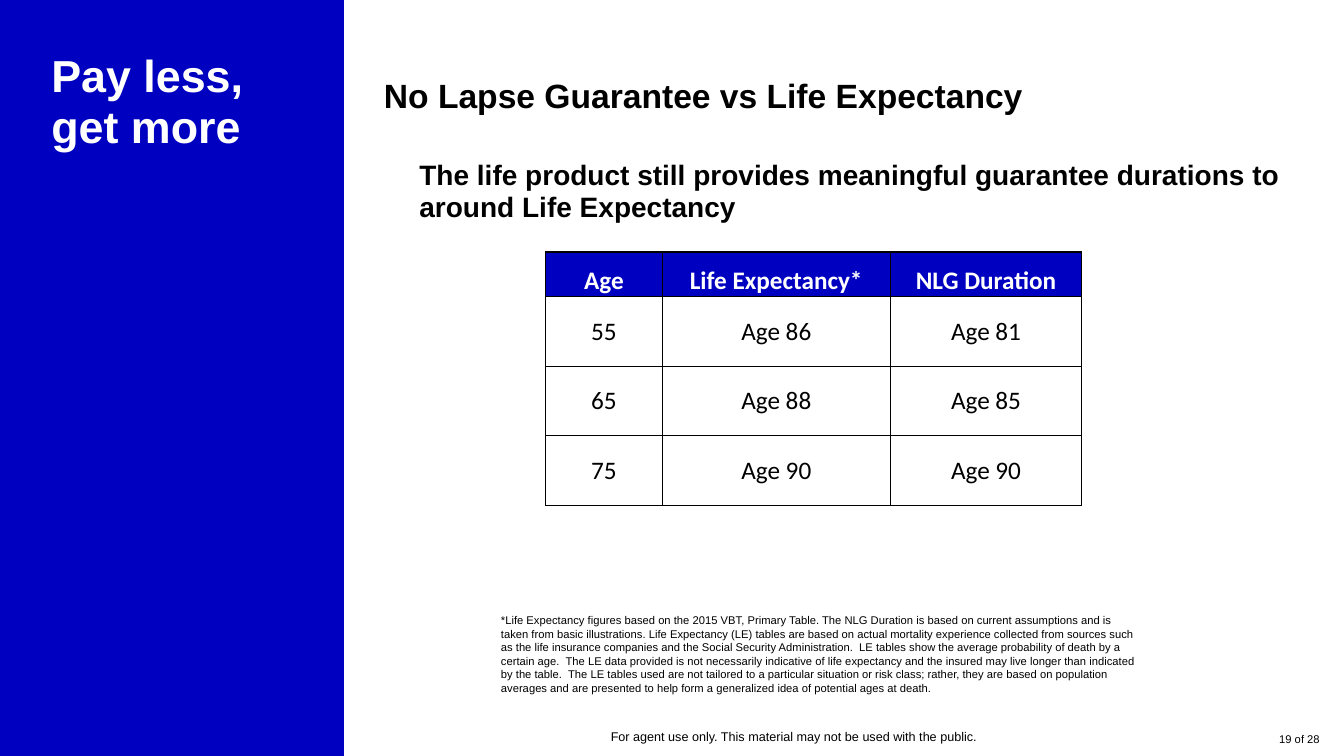
"""Build the slide comparing no lapse guarantee durations with life expectancy."""
from lxml import etree
from pptx import Presentation
from pptx.dml.color import RGBColor
from pptx.enum.shapes import MSO_SHAPE
from pptx.enum.text import MSO_ANCHOR, PP_ALIGN
from pptx.oxml.ns import qn
from pptx.util import Inches, Pt

BLUE = RGBColor(0x00, 0x00, 0xC1)
BLACK = RGBColor(0x00, 0x00, 0x00)
WHITE = RGBColor(0xFF, 0xFF, 0xFF)
TOP, MIDDLE, BOTTOM = MSO_ANCHOR.TOP, MSO_ANCHOR.MIDDLE, MSO_ANCHOR.BOTTOM
LEFT, CENTER, RIGHT = PP_ALIGN.LEFT, PP_ALIGN.CENTER, PP_ALIGN.RIGHT
RECTANGLE = MSO_SHAPE.RECTANGLE

SIDE_TITLE = "Pay less, get more"
HEADING = "No Lapse Guarantee vs Life Expectancy"
MESSAGE = ("The life product still provides meaningful guarantee durations "
           "to around Life Expectancy")
DURATIONS = [
    ("Age", "Life Expectancy*", "NLG Duration"),
    ("55", "Age 86", "Age 81"),
    ("65", "Age 88", "Age 85"),
    ("75", "Age 90", "Age 90"),
]
COLUMN_WIDTHS = (1.16, 2.26, 1.9)
HEADER_HEIGHT, ROW_HEIGHT = 0.44, 0.69
FOOTNOTE = (
    "*Life Expectancy figures based on the 2015 VBT, Primary Table. The NLG Duration is "
    "based on current assumptions and is taken from basic illustrations. Life Expectancy "
    "(LE) tables are based on actual mortality experience collected from sources such as "
    "the life insurance companies and the Social Security Administration.  LE tables show "
    "the average probability of death by a certain age.  The LE data provided is not "
    "necessarily indicative of life expectancy and the insured may live longer than "
    "indicated by the table.  The LE tables used are not tailored to a particular "
    "situation or risk class; rather, they are based on population averages and are "
    "presented to help form a generalized idea of potential ages at death."
)
DISCLAIMER = "For agent use only. This material may not be used with the public."
PAGE = "19 of 28"


def style(paragraph, font_name, size, color, bold, align):
    paragraph.alignment = align
    font = paragraph.runs[0].font
    font.name, font.size, font.bold = font_name, Pt(size), bold
    font.color.rgb = color


def add_text(slide, text, box, size, color=BLACK, bold=False, align=LEFT,
             anchor=TOP, inset=(0.1, 0.05), spacing=1.0):
    frame = slide.shapes.add_textbox(*map(Inches, box)).text_frame
    frame.word_wrap = True
    frame.vertical_anchor = anchor
    frame.margin_left = frame.margin_right = Inches(inset[0])
    frame.margin_top = frame.margin_bottom = Inches(inset[1])
    frame.text = text
    paragraph = frame.paragraphs[0]
    paragraph.line_spacing = spacing
    style(paragraph, "Arial", size, color, bold, align)


def add_border(cell, side, width):
    line = etree.SubElement(cell._tc.get_or_add_tcPr(), qn(f"a:{side}"), w=str(Pt(width)))
    fill = etree.SubElement(line, qn("a:solidFill"))
    etree.SubElement(fill, qn("a:srgbClr"), val=str(BLACK))


def add_durations(slide, left, top):
    heights = [HEADER_HEIGHT] + [ROW_HEIGHT] * (len(DURATIONS) - 1)
    table = slide.shapes.add_table(
        len(DURATIONS), len(COLUMN_WIDTHS), Inches(left), Inches(top),
        Inches(sum(COLUMN_WIDTHS)), Inches(sum(heights))).table
    table.horz_banding = False
    for column, width in zip(table.columns, COLUMN_WIDTHS):
        column.width = Inches(width)
    for r, (values, height) in enumerate(zip(DURATIONS, heights)):
        table.rows[r].height = Inches(height)
        header = r == 0
        for c, value in enumerate(values):
            cell = table.cell(r, c)
            cell.text = value
            cell.margin_left = cell.margin_right = cell.margin_top = Inches(0.01)
            cell.margin_bottom = 0
            cell.vertical_anchor = BOTTOM if header else MIDDLE
            style(cell.text_frame.paragraphs[0], "Calibri", 18,
                  WHITE if header else BLACK, header, CENTER)
            for side in ("lnL", "lnR", "lnT", "lnB"):
                thick = header or (r == 1 and side == "lnT")
                add_border(cell, side, 1 if thick else 0.5)
            cell.fill.solid()
            cell.fill.fore_color.rgb = BLUE if header else WHITE


def main():
    deck = Presentation()
    deck.slide_width, deck.slide_height = Inches(13.33), Inches(7.5)
    slide = deck.slides.add_slide(deck.slide_layouts[6])

    side_panel = slide.shapes.add_shape(RECTANGLE, 0, 0, Inches(3.41), deck.slide_height)
    side_panel.shadow.inherit = False
    side_panel.fill.solid()
    side_panel.fill.fore_color.rgb = BLUE
    side_panel.line.fill.background()

    add_text(slide, DISCLAIMER, (5.96, 7.18, 7.0, 0.25), 9)
    add_text(slide, SIDE_TITLE, (0.51, 0.51, 2.6, 3.72), 32, WHITE, True,
             inset=(0, 0), spacing=0.95)
    add_text(slide, PAGE, (12.61, 7.21, 0.48, 0.19), 8, align=RIGHT,
             anchor=BOTTOM, inset=(0, 0))
    add_text(slide, MESSAGE, (4.16, 1.59, 8.93, 0.7), 20, bold=True,
             inset=(0, 0), spacing=0.95)
    add_durations(slide, 5.41, 2.5)
    add_text(slide, FOOTNOTE, (4.87, 6.04, 6.54, 1.11), 8)
    add_text(slide, HEADING, (3.71, 0.69, 7.2, 0.5), 24, bold=True)
    deck.save("out.pptx")


if __name__ == "__main__":
    main()
